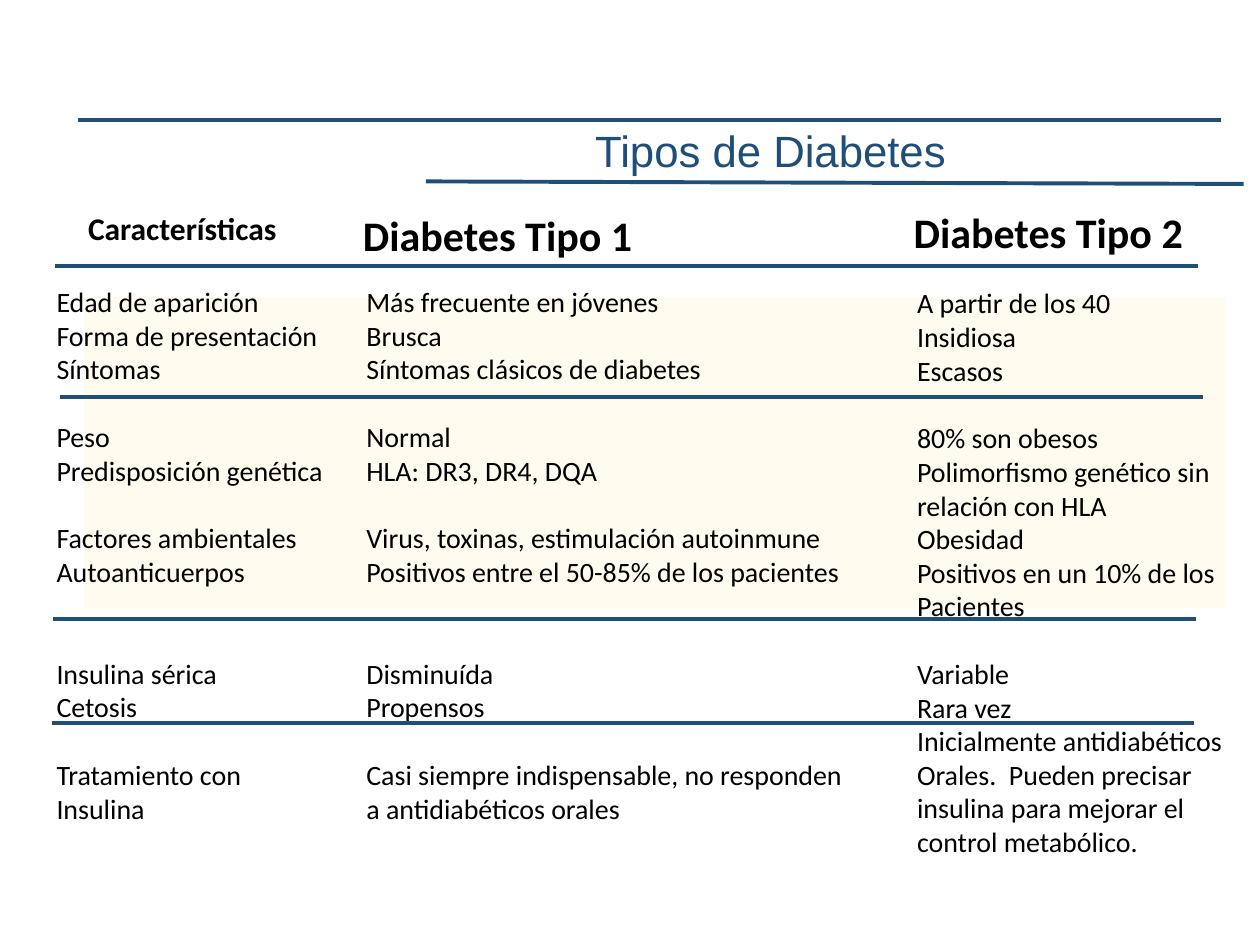
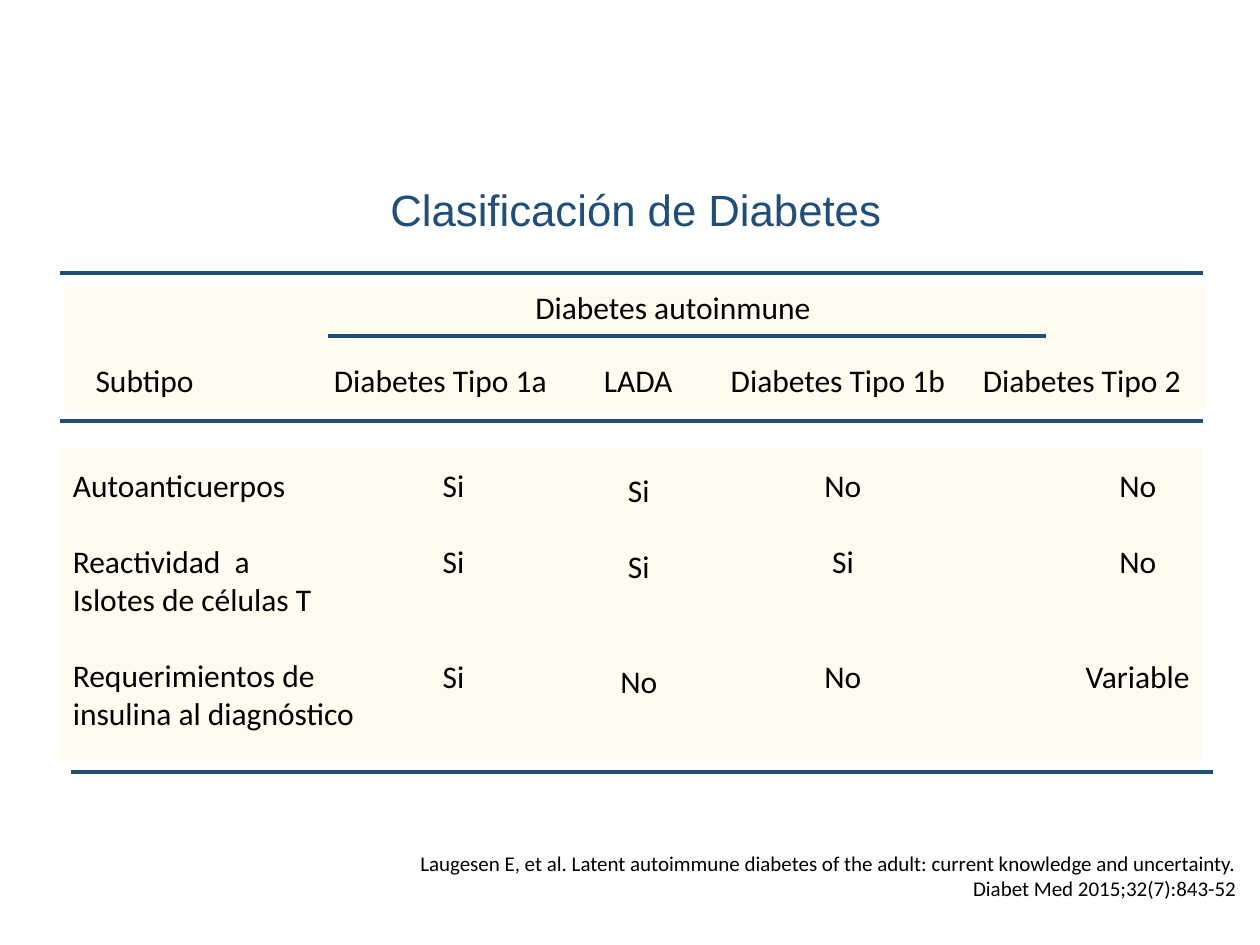
import pptx
import pptx.util
import pptx.dml.color
import pptx.enum.shapes
import pptx.enum.text
import pptx.oxml.ns
import lxml.etree

Inches = pptx.util.Inches
ALIGN = pptx.enum.text.PP_ALIGN
NAVY = "1F4E79"
CREAM = "FFFBEF"
BLACK = "000000"
RULE_LENGTH = 9.07
LINE_HEIGHT = 1.22
TITLE_FONT = {"name": "Arial", "size": 25, "color": NAVY}
BODY_FONT = {"name": "Calibri", "size": 16, "color": BLACK}
LABEL_FONT = BODY_FONT | {"size": 18}
HEADING_FONT = BODY_FONT | {"size": 24, "bold": True}
CITATION_FONT = BODY_FONT | {"size": 12}

FEATURES = [
    "Edad de aparición", "Forma de presentación", "Síntomas", "",
    "Peso", "Predisposición genética", "",
    "Factores ambientales", "Autoanticuerpos", "", "",
    "Insulina sérica", "Cetosis", "",
    "Tratamiento con", "Insulina",
]
TYPE_1 = [
    "Más frecuente en jóvenes", "Brusca", "Síntomas clásicos de diabetes", "",
    "Normal", "HLA: DR3, DR4, DQA", "",
    "Virus, toxinas, estimulación autoinmune",
    "Positivos entre el 50-85% de los pacientes", "", "",
    "Disminuída", "Propensos", "",
    "Casi siempre indispensable, no responden", "a antidiabéticos orales",
]
TYPE_2 = [
    "A partir de los 40", "Insidiosa", "Escasos", "",
    "80% son obesos", "Polimorfismo genético sin", "relación con HLA",
    "Obesidad", "Positivos en un 10% de los", "Pacientes", "",
    "Variable", "Rara vez", "Inicialmente antidiabéticos",
    "Orales.  Pueden precisar", "insulina para mejorar el", "control metabólico.",
]
CRITERIA = [
    "Autoanticuerpos", "",
    "Reactividad  a", "Islotes de células T", "",
    "Requerimientos de", "insulina al diagnóstico",
]
SUBTYPES = [
    ("Diabetes Tipo 1a", 2.54, 1.91, (3.41, 3.65, 0.38), ("Si", "Si", "Si")),
    ("LADA", 4.69, 0.75, (4.82, 3.69, 0.5), ("Si", "Si", "No")),
    ("Diabetes Tipo 1b", 5.69, 1.92, (6.44, 3.65, 0.5), ("No", "Si", "No")),
    ("Diabetes Tipo 2", 7.69, 1.79, (8.51, 3.65, 1.04), ("No", "No", "Variable")),
]
CITATION = (
    "Laugesen E, et al. Latent autoimmune diabetes of the adult: "
    "current knowledge and uncertainty. Diabet Med 2015;32(7):843-52"
)


def rgb(color):
    return pptx.dml.color.RGBColor.from_string(color)


def format_font(font, values):
    for name, value in values.items():
        if name == "color":
            font.color.rgb = rgb(value)
        elif name == "size":
            font.size = pptx.util.Pt(value)
        else:
            setattr(font, name, value)


def fill_text(shape, lines, font, align=ALIGN.LEFT, wrap=False):
    frame = shape.text_frame
    frame_format = {
        "word_wrap": wrap,
        "auto_size": pptx.enum.text.MSO_AUTO_SIZE.NONE,
        "vertical_anchor": pptx.enum.text.MSO_ANCHOR.TOP,
    }
    for name, value in frame_format.items():
        setattr(frame, name, value)
    paragraph = frame.paragraphs[0]
    skipped = 0
    for index, line in enumerate(lines):
        if not line:
            skipped += 1
            continue
        if index:
            paragraph = frame.add_paragraph()
        paragraph.text = line
        paragraph.alignment = align
        paragraph.space_before = pptx.util.Pt(skipped * font["size"] * LINE_HEIGHT)
        format_font(paragraph.font, font)
        skipped = 0


def add_text(slide, box, lines, font, align=ALIGN.LEFT, wrap=False):
    shape = slide.shapes.add_textbox(*map(Inches, box))
    fill_text(shape, lines, font, align, wrap)


def add_slide(presentation, title, box):
    slide = presentation.slides.add_slide(presentation.slide_layouts[5])
    shape = slide.shapes.title
    for name, value in zip(("left", "top", "width", "height"), box):
        setattr(shape, name, Inches(value))
    fill_text(shape, [title], TITLE_FONT, ALIGN.CENTER)
    return slide


def add_band(slide, *box):
    band = slide.shapes.add_shape(
        pptx.enum.shapes.MSO_SHAPE.RECTANGLE, *map(Inches, box))
    band.shadow.inherit = False
    band.fill.solid()
    band.fill.fore_color.rgb = rgb(CREAM)
    band.line.fill.background()


def add_rule(slide, left, top, length=RULE_LENGTH, drop=0):
    rule = slide.shapes.add_connector(
        pptx.enum.shapes.MSO_CONNECTOR.STRAIGHT,
        *map(Inches, (left, top, left + length, top + drop)))
    rule.line.color.rgb = rgb(NAVY)
    rule.line.width = pptx.util.Pt(2.25)
    properties = rule._element.spPr
    lxml.etree.SubElement(properties, pptx.oxml.ns.qn("a:effectLst"))


def build_types(presentation):
    slide = add_slide(presentation, "Tipos de Diabetes", (4.61, 0.93, 3.01, 0.52))
    add_band(slide, 0.67, 2.36, 9.06, 2.47)
    add_text(slide, (0.6, 1.61, 1.71, 0.4), ["Características"],
             LABEL_FONT | {"bold": True})
    for heading, left, top in (("Diabetes Tipo 1", 2.77, 1.61),
                               ("Diabetes Tipo 2", 7.14, 1.59)):
        add_text(slide, (left, top, 2.36, 0.5), [heading], HEADING_FONT, ALIGN.CENTER)
    add_text(slide, (0.35, 2.21, 2.38, 4.41), FEATURES, BODY_FONT, wrap=True)
    add_text(slide, (2.81, 2.21, 4.07, 4.68), TYPE_1, BODY_FONT)
    add_text(slide, (7.18, 2.22, 2.65, 4.68), TYPE_2, BODY_FONT)
    for left, top in ((0.62, 0.95), (0.44, 2.11), (0.48, 3.15),
                      (0.42, 4.91), (0.41, 5.74)):
        add_rule(slide, left, top)
    add_rule(slide, 3.38, 1.44, 6.49, 0.02)


def build_classification(presentation):
    slide = add_slide(presentation, "Clasificación de Diabetes",
                      (2.98, 1.4, 4.13, 0.52))
    add_band(slide, 0.51, 2.28, 9.06, 0.97)
    add_band(slide, 0.48, 3.56, 9.06, 2.47)
    add_text(slide, (4.15, 2.24, 2.47, 0.4), ["Diabetes autoinmune"], LABEL_FONT)
    add_text(slide, (0.66, 2.82, 0.99, 0.4), ["Subtipo"], LABEL_FONT)
    add_text(slide, (0.48, 3.65, 2.63, 2.22), CRITERIA, LABEL_FONT, wrap=True)
    for heading, left, width, answer_box, answers in SUBTYPES:
        add_text(slide, (left, 2.82, width, 0.4), [heading], LABEL_FONT, ALIGN.CENTER)
        first, second, third = answers
        add_text(slide, (*answer_box, 1.92), [first, "", second, "", "", third],
                 LABEL_FONT, ALIGN.CENTER)
    for left, top in ((0.48, 2.17), (0.48, 3.34), (0.56, 6.13)):
        add_rule(slide, left, top)
    add_rule(slide, 2.6, 2.67, 5.7)
    add_text(slide, (2.99, 6.7, 6.92, 0.5), [CITATION], CITATION_FONT,
             ALIGN.RIGHT, wrap=True)


def main():
    presentation = pptx.Presentation()
    presentation.slide_width = Inches(10)
    presentation.slide_height = Inches(7.5)
    build_types(presentation)
    build_classification(presentation)
    presentation.save("out.pptx")


if __name__ == "__main__":
    main()
